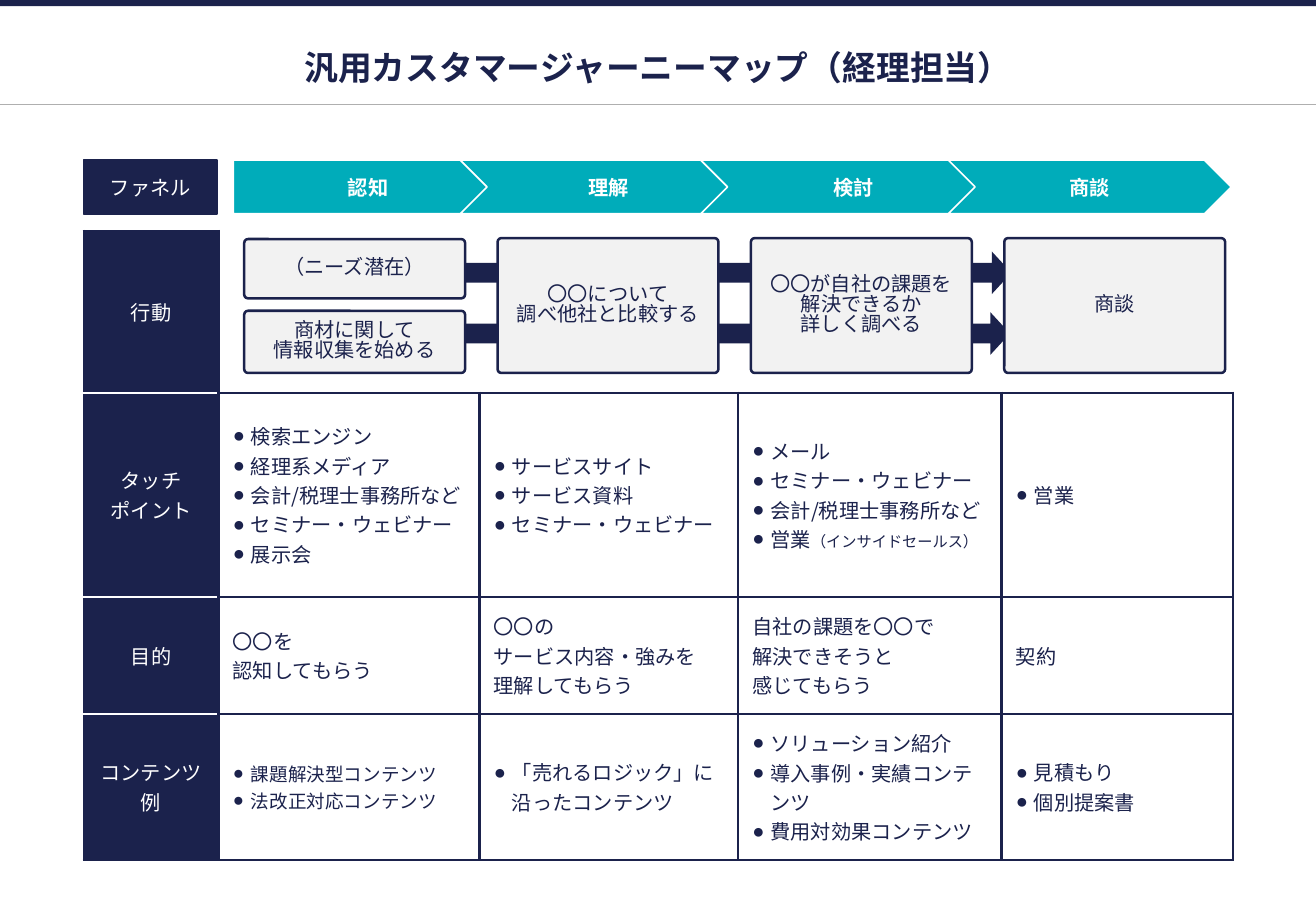
from dataclasses import dataclass

from lxml import etree
from pptx import Presentation
from pptx.dml.color import RGBColor
from pptx.enum.shapes import MSO_CONNECTOR, MSO_SHAPE
from pptx.enum.text import MSO_ANCHOR, PP_ALIGN
from pptx.oxml.ns import qn
from pptx.util import Cm, Pt

RECTANGLE = MSO_SHAPE.RECTANGLE
ROUNDED = MSO_SHAPE.ROUNDED_RECTANGLE
ARROW = MSO_SHAPE.RIGHT_ARROW
PENTAGON = MSO_SHAPE.PENTAGON
CHEVRON = MSO_SHAPE.CHEVRON
STRAIGHT = MSO_CONNECTOR.STRAIGHT
MIDDLE = MSO_ANCHOR.MIDDLE
CENTER, LEFT = PP_ALIGN.CENTER, PP_ALIGN.LEFT


@dataclass(frozen=True)
class Theme:
    font: str = "Noto Sans CJK JP"
    bullet_font: str = "Arial"
    navy: str = "1B224C"
    teal: str = "00ACBA"
    white: str = "FFFFFF"
    pale: str = "F2F2F2"
    grey: str = "AFAFAF"
    title: float = 20
    body: float = 12
    compact: float = 11
    note: float = 9
    border: float = 1.5


THEME = Theme()


@dataclass(frozen=True)
class Run:
    text: str
    size: float = THEME.body


@dataclass(frozen=True)
class TextStyle:
    color: str = THEME.navy
    bold: bool = False
    align: PP_ALIGN = CENTER
    spacing: float = 1.0
    bulleted: bool = False


@dataclass(frozen=True)
class Box:
    """A shape with its place in centimetres; insets run left, top, right, bottom."""
    kind: MSO_SHAPE
    left: float
    top: float
    width: float
    height: float
    fill: str
    line: str = ""
    line_width: float = 1
    adjustments: tuple[float, ...] = ()
    paragraphs: tuple[tuple[Run, ...], ...] = ()
    style: TextStyle = TextStyle()
    insets: tuple[float, ...] = (0.2, 0.1, 0.2, 0.1)


@dataclass(frozen=True)
class Cell:
    paragraphs: tuple[tuple[Run, ...], ...] = ()
    bulleted: bool = False


def lines(*texts: str, size: float = THEME.body) -> tuple[tuple[Run, ...], ...]:
    return tuple((Run(text, size),) for text in texts)


def points(*texts: str, size: float = THEME.body) -> Cell:
    return Cell(lines(*texts, size=size), bulleted=True)


def add_bullet(paragraph) -> None:
    properties = paragraph._p.get_or_add_pPr()
    properties.set("marL", str(Cm(0.38)))
    properties.set("indent", str(-Cm(0.4)))
    color = etree.SubElement(properties, qn("a:buClr"))
    etree.SubElement(color, qn("a:srgbClr"), val=THEME.navy)
    etree.SubElement(properties, qn("a:buFont"), typeface=THEME.bullet_font)
    etree.SubElement(properties, qn("a:buChar"), char="●")


def write_text(frame, paragraphs: tuple[tuple[Run, ...], ...], style: TextStyle) -> None:
    frame.word_wrap = True
    for index, runs in enumerate(paragraphs):
        paragraph = frame.add_paragraph() if index else frame.paragraphs[0]
        paragraph.alignment = style.align
        if style.spacing != 1:
            paragraph.line_spacing = style.spacing
        if style.bulleted:
            add_bullet(paragraph)
        for item in runs:
            for part_index, part in enumerate(item.text.split("\n")):
                if part_index:
                    paragraph.add_line_break()
                run = paragraph.add_run()
                run.text = part
                run.font.size = Pt(item.size)
                run.font.bold = style.bold
                run.font.color.rgb = RGBColor.from_string(style.color)
                run.font.name = THEME.font
                etree.SubElement(run._r.get_or_add_rPr(), qn("a:ea"), typeface=THEME.font)


def set_insets(target, insets: tuple[float, ...]) -> None:
    (target.margin_left, target.margin_top,
     target.margin_right, target.margin_bottom) = map(Cm, insets)


def add_box(slide, box: Box) -> None:
    shape = slide.shapes.add_shape(
        box.kind, Cm(box.left), Cm(box.top), Cm(box.width), Cm(box.height))
    shape.shadow.inherit = False
    for index, value in enumerate(box.adjustments):
        shape.adjustments[index] = value
    shape.fill.solid()
    shape.fill.fore_color.rgb = RGBColor.from_string(box.fill)
    if box.line:
        shape.line.color.rgb = RGBColor.from_string(box.line)
        shape.line.width = Pt(box.line_width)
    else:
        shape.line.fill.background()
    if box.paragraphs:
        set_insets(shape.text_frame, box.insets)
        shape.text_frame.vertical_anchor = MIDDLE
        write_text(shape.text_frame, box.paragraphs, box.style)


def set_border(cell, edge: str, color: str) -> None:
    """Draw one edge (L, R, T or B); an empty colour leaves it open."""
    line = etree.SubElement(cell._tc.get_or_add_tcPr(), qn(f"a:ln{edge}"),
                            w=str(Pt(THEME.border)))
    if color:
        fill = etree.SubElement(line, qn("a:solidFill"))
        etree.SubElement(fill, qn("a:srgbClr"), val=color)
    else:
        etree.SubElement(line, qn("a:noFill"))


def edge_colors(row: int, column: int, last_row: int) -> dict[str, str]:
    navy, white = THEME.navy, THEME.white
    if column == 0:
        return {"L": navy, "R": navy, "T": white if row else navy,
                "B": navy if row == last_row else white}
    if row == 0:
        return {"L": navy if column == 1 else "", "R": "", "T": "", "B": navy}
    return dict.fromkeys("LRTB", navy)


def add_journey_table(slide, rows: tuple[tuple[Cell, ...], ...]) -> None:
    widths = (2.82, 5.46, 5.41, 5.51, 4.85)
    heights = (3.38, 4.27, 2.45, 3.05)
    table = slide.shapes.add_table(len(heights), len(widths), Cm(1.75), Cm(4.83),
                                   Cm(sum(widths)), Cm(sum(heights))).table
    table.first_row = table.horz_banding = False
    for column, width in zip(table.columns, widths):
        column.width = Cm(width)
    for row, height in zip(table.rows, heights):
        row.height = Cm(height)
    for row_index, contents in enumerate(rows):
        for column_index, content in enumerate(contents):
            cell = table.cell(row_index, column_index)
            is_heading = column_index == 0
            for edge, color in edge_colors(row_index, column_index, len(rows) - 1).items():
                set_border(cell, edge, color)
            if content.paragraphs:
                cell.fill.solid()
                cell.fill.fore_color.rgb = RGBColor.from_string(
                    THEME.navy if is_heading else THEME.white)
            else:
                cell.fill.background()
            set_insets(cell, (0.3, 0.3, 0.3 if is_heading else 0.2, 0.3))
            cell.vertical_anchor = MIDDLE
            style = (TextStyle(color=THEME.white) if is_heading
                     else TextStyle(align=LEFT, bulleted=content.bulleted))
            write_text(cell.text_frame, content.paragraphs, style)


def add_heading(slide, slide_width: float) -> None:
    add_box(slide, Box(RECTANGLE, 0, 0, slide_width, 0.13, THEME.navy))
    rule = slide.shapes.add_connector(STRAIGHT, 0, Cm(2.18), Cm(slide_width), Cm(2.18))
    rule.line.color.rgb = RGBColor.from_string(THEME.grey)
    rule.line.width = Pt(0.75)
    etree.SubElement(rule._element.spPr, qn("a:effectLst"))
    title = slide.shapes.add_textbox(Cm(1.75), Cm(0.86), Cm(24.03), Cm(1.07))
    set_insets(title.text_frame, (0.1,) * 4)
    title.text_frame.vertical_anchor = MIDDLE
    write_text(title.text_frame,
               lines("汎用カスタマージャーニーマップ（経理担当）", size=THEME.title),
               TextStyle(bold=True))


def add_funnel(slide) -> None:
    stages = (("認知", 4.88, 5.92), ("理解", 9.63, 6.22),
              ("検討", 14.66, 6.38), ("商談", 19.84, 5.92))
    style = TextStyle(color=THEME.white, bold=True, spacing=0.9)
    for index, (name, left, width) in enumerate(stages):
        add_box(slide, Box(CHEVRON if index else PENTAGON, left, 3.35, width, 1.12,
                           THEME.teal, THEME.white, 1, (0.5,), lines(name), style,
                           (0.1, 0.1, 0.1, 0)))
    add_box(slide, Box(RECTANGLE, 1.75, 3.35, 2.79, 1.12, THEME.navy, THEME.navy, 1, (),
                       lines("ファネル"), TextStyle(color=THEME.white), (0.4,) * 4))


def add_actions(slide) -> None:
    for left, top, width in ((9.17, 6.53, 11.96), (9.5, 5.26, 11.66)):
        add_box(slide, Box(ARROW, left, top, width, 0.89, THEME.navy,
                           adjustments=(0.465, 0.461)))
    actions = ((0, 5.0, 1.24, lines("（ニーズ潜在）")),
               (0, 6.5, 1.3, lines("商材に関して", "情報収集を始める")),
               (1, 4.98, 2.82, lines("〇〇について", "調べ他社と比較する")),
               (2, 4.98, 2.82, lines("〇〇が自社の課題を解決できるか", "詳しく調べる")),
               (3, 4.98, 2.82, lines("商談")))
    for stage, top, height, paragraphs in actions:
        add_box(slide, Box(ROUNDED, 5.11 + 5.3 * stage, top, 4.62, height, THEME.pale,
                           THEME.navy, THEME.border, (0.08 / height,), paragraphs,
                           TextStyle(spacing=0.83)))


JOURNEY = (
    (Cell(lines("行動")), Cell(), Cell(), Cell(), Cell()),
    (Cell(lines("タッチ\nポイント")),
     points("検索エンジン", "経理系メディア", "会計/税理士事務所など",
            "セミナー・ウェビナー", "展示会"),
     points("サービスサイト", "サービス資料", "セミナー・ウェビナー"),
     Cell(lines("メール", "セミナー・ウェビナー", "会計/税理士事務所など")
          + ((Run("営業"), Run("（インサイドセールス）", THEME.note)),), True),
     points("営業")),
    (Cell(lines("目的")),
     Cell(lines("〇〇を", "認知してもらう")),
     Cell(lines("〇〇の", "サービス内容・強みを", "理解してもらう")),
     Cell(lines("自社の課題を〇〇で", "解決できそうと", "感じてもらう")),
     Cell(lines("契約"))),
    (Cell(lines("コンテンツ例")),
     points("課題解決型コンテンツ", "法改正対応コンテンツ", size=THEME.compact),
     points("「売れるロジック」に沿ったコンテンツ"),
     points("ソリューション紹介", "導入事例・実績コンテンツ", "費用対効果コンテンツ"),
     points("見積もり", "個別提案書")),
)


def main() -> None:
    slide_width = 27.53
    presentation = Presentation()
    presentation.slide_width, presentation.slide_height = Cm(slide_width), Cm(19.05)
    slide = presentation.slides.add_slide(presentation.slide_layouts[6])
    add_heading(slide, slide_width)
    add_journey_table(slide, JOURNEY)
    add_funnel(slide)
    add_actions(slide)
    presentation.save("out.pptx")


if __name__ == "__main__":
    main()
